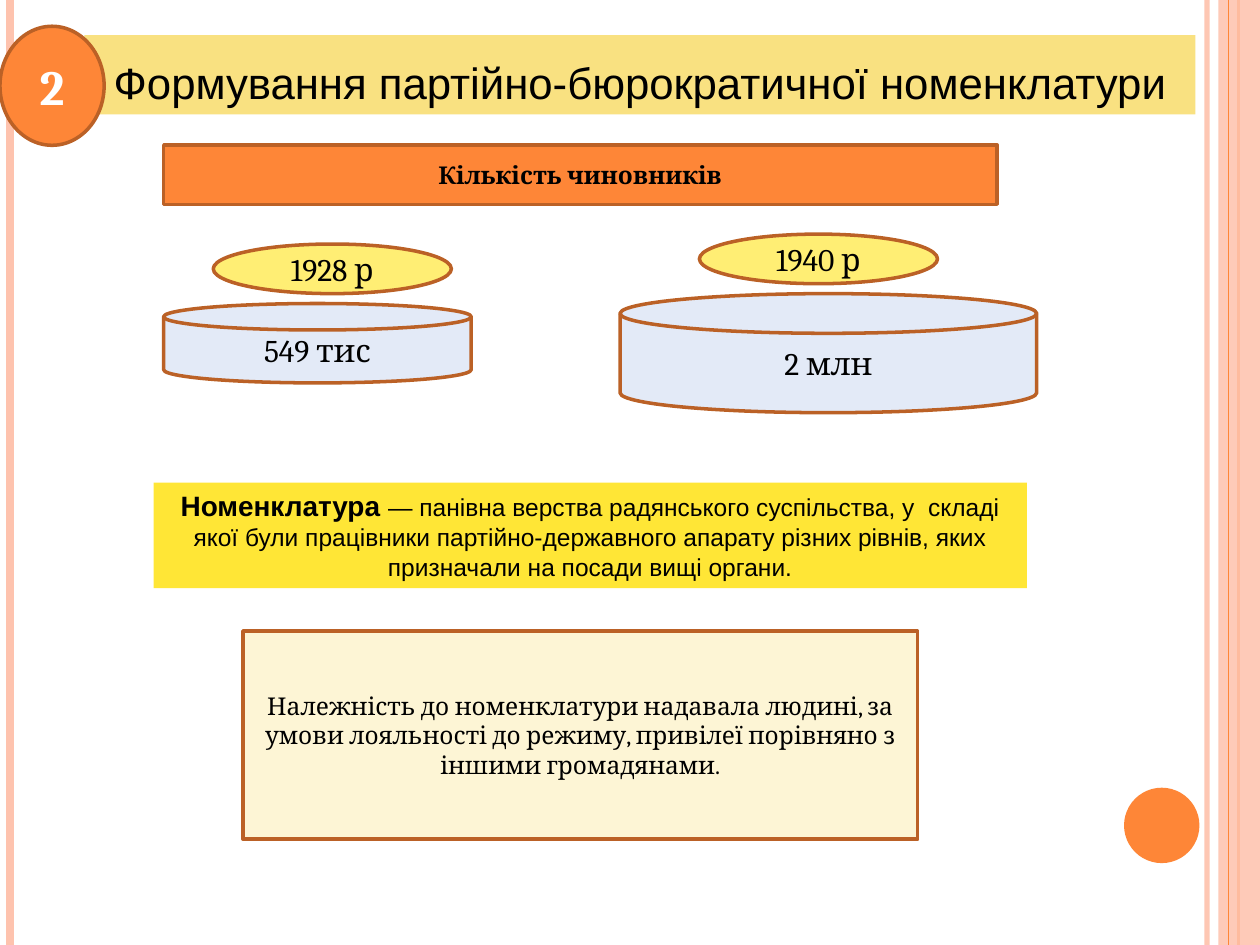
from lxml import etree
from pptx import Presentation
from pptx.dml.color import RGBColor
from pptx.enum.shapes import MSO_CONNECTOR, MSO_SHAPE as Shape
from pptx.enum.text import MSO_ANCHOR as Anchor, PP_ALIGN
from pptx.oxml.ns import qn
from pptx.util import Cm, Pt

BLACK = RGBColor(0x00, 0x00, 0x00)
WHITE = RGBColor(0xFF, 0xFF, 0xFF)
ORANGE = RGBColor(0xFE, 0x86, 0x37)
BROWN = RGBColor(0xBB, 0x61, 0x26)
PEACH = RGBColor(0xFE, 0xC3, 0xAE)
SAND = RGBColor(0xF9, 0xE1, 0x81)
LEMON = RGBColor(0xFF, 0xEE, 0x74)
YELLOW = RGBColor(0xFF, 0xE6, 0x36)
PALE_BLUE = RGBColor(0xE3, 0xEA, 0xF7)
CREAM = RGBColor(0xFD, 0xF5, 0xD5)

SLIDE_WIDTH, SLIDE_HEIGHT = 25.4, 19.05


def set_opacity(color_format_parent, percent):
    color = next(color_format_parent.iter(qn("a:srgbClr")))
    etree.SubElement(color, qn("a:alpha")).set("val", str(percent * 1000))


def add_stripe(slide, x, color, width, opacity=100):
    stripe = slide.shapes.add_connector(
        MSO_CONNECTOR.STRAIGHT, Cm(x), Cm(0), Cm(x), Cm(SLIDE_HEIGHT))
    stripe.line.color.rgb = color
    stripe.line.width = Pt(width)
    properties = stripe._element.spPr
    if opacity < 100:
        set_opacity(properties, opacity)
    etree.SubElement(properties, qn("a:effectLst"))


def add_figure(slide, kind, box, fill, outline=None):
    shape = slide.shapes.add_shape(kind, *[Cm(length) for length in box])
    shape.shadow.inherit = False
    shape.fill.solid()
    shape.fill.fore_color.rgb = fill
    if outline is None:
        shape.line.fill.background()
    else:
        shape.line.color.rgb = outline
        shape.line.width = Pt(2)
    return shape


def write(shape, runs, font="Cambria", color=BLACK, anchor=Anchor.MIDDLE, spacing=None):
    frame = shape.text_frame
    frame.word_wrap = True
    frame.vertical_anchor = anchor
    paragraph = frame.paragraphs[0]
    paragraph.alignment = PP_ALIGN.CENTER
    if spacing:
        paragraph.line_spacing = spacing
    for text, size, bold in runs:
        run = paragraph.add_run()
        run.text = text
        run.font.name = font
        run.font.size = Pt(size)
        run.font.bold = bold
        run.font.color.rgb = color


def add_side_decoration(slide):
    add_stripe(slide, 24.33, PEACH, 3, 93)
    add_stripe(slide, 0.2, PEACH, 4.5)
    add_stripe(slide, 24.97, ORANGE, 1.5)
    band = add_figure(slide, Shape.RECTANGLE, (24.56, 0, 0.84, SLIDE_HEIGHT), PEACH)
    set_opacity(band._element.spPr, 87)
    add_stripe(slide, 24.77, ORANGE, 0.75)
    add_figure(slide, Shape.OVAL, (22.66, 15.88, 1.52, 1.52), ORANGE)


def add_title(slide):
    title = add_figure(slide, Shape.RECTANGLE, (1.7, 0.71, 22.4, 1.6), SAND)
    write(title, [("Формування партійно-бюрократичної номенклатури", 25, False)],
          font="Arial", anchor=Anchor.BOTTOM, spacing=0.8)


def add_year_count(slide, year, year_position, count, disk_box):
    oval = add_figure(slide, Shape.OVAL, (*year_position, 4.8, 1), LEMON, BROWN)
    write(oval, [(year, 18, False)])
    disk = add_figure(slide, Shape.FLOWCHART_MAGNETIC_DISK, disk_box, PALE_BLUE, BROWN)
    write(disk, [(count, 18, False)])


def add_definition(slide):
    definition = add_figure(slide, Shape.RECTANGLE, (3.1, 9.73, 17.6, 2.13), YELLOW)
    write(definition, [
        ("Номенклатура ", 16, True),
        ("— панівна верства радянського суспільства, у  складі якої були "
         "працівники партійно-державного апарату різних рівнів, яких "
         "призначали на посади вищі органи.", 14, False),
    ], font="Arial", anchor=Anchor.TOP)


def main():
    presentation = Presentation()
    presentation.slide_width = Cm(SLIDE_WIDTH)
    presentation.slide_height = Cm(SLIDE_HEIGHT)
    slide = presentation.slides.add_slide(presentation.slide_layouts[6])

    add_side_decoration(slide)
    add_title(slide)
    heading = add_figure(slide, Shape.RECTANGLE, (3.3, 2.92, 16.8, 1.2), ORANGE, BROWN)
    write(heading, [("Кількість чиновників", 14, True)])
    add_year_count(slide, "1928 р", (4.3, 4.92), "549 тис", (3.3, 6.12, 6.2, 1.6))
    add_year_count(slide, "1940 р", (14.1, 4.72), "2 млн", (12.5, 5.92, 8.4, 2.4))
    add_definition(slide)
    privileges = add_figure(slide, Shape.RECTANGLE, (4.9, 12.72, 13.6, 4.2), CREAM, BROWN)
    write(privileges, [("Належність до номенклатури надавала людині, за умови "
                        "лояльності до режиму, привілеї порівняно з іншими "
                        "громадянами.", 14, False)])
    number = add_figure(slide, Shape.OVAL, (0, 0.53, 2.1, 2.4), ORANGE, BROWN)
    write(number, [("2", 28, True)], color=WHITE)

    presentation.save("out.pptx")


if __name__ == "__main__":
    main()
